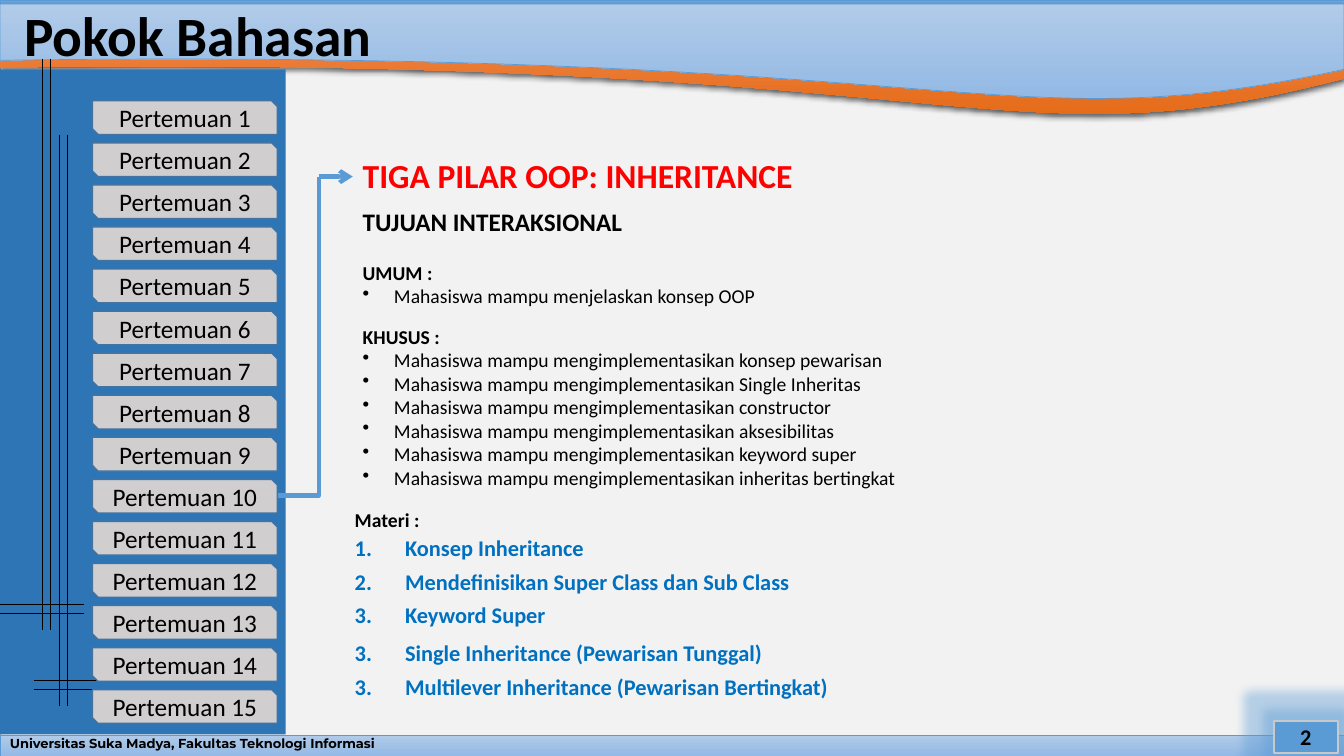
from lxml.etree import SubElement
from pptx import Presentation
from pptx.dml.color import RGBColor
from pptx.enum.shapes import MSO_CONNECTOR, MSO_SHAPE
from pptx.enum.text import MSO_ANCHOR, MSO_AUTO_SIZE, PP_ALIGN
from pptx.oxml.ns import qn
from pptx.util import Cm, Pt

RECT, SNIP = MSO_SHAPE.RECTANGLE, MSO_SHAPE.SNIP_2_DIAG_RECTANGLE
LINE, ELBOW = MSO_CONNECTOR.STRAIGHT, MSO_CONNECTOR.ELBOW
MIDDLE, LEFT, FIXED = MSO_ANCHOR.MIDDLE, PP_ALIGN.LEFT, MSO_AUTO_SIZE.NONE
HUES = {
    "ink": "000000", "page": "F2F2F2", "rim": "A5A5A5", "side": "2E75B6",
    "sky": "5B9BD5", "pale": "B1CBE9", "mist": "93B9E4", "crest": "71A6DB",
    "deep": "448ACA", "peach": "F18C57", "rust": "E56C19", "tile": "D0CECE",
    "edge": "43739E", "frame": "C9C9C9", "red": "FF0000", "blue": "0070C0",
}
RGB = {name: RGBColor.from_string(code) for name, code in HUES.items()}
WIDE, HIGH = 33.87, 19.05


def paint(shape, fill, edge=None, width=0.5):
    """Fill with one colour or a vertical pair of colours, and set the outline."""
    shape.shadow.inherit = False
    if isinstance(fill, tuple):
        shape.fill.gradient()
        shape.fill.gradient_angle = 270
        for stop, hue in zip(shape.fill.gradient_stops, fill):
            stop.color.rgb = RGB[hue]
    else:
        shape.fill.solid()
        shape.fill.fore_color.rgb = RGB[fill]
    if edge:
        shape.line.color.rgb = RGB[edge]
        shape.line.width = Pt(width)
    else:
        shape.line.fill.background()


def write(para, text, size, hue="ink", **form):
    run = para.add_run()
    run.text = text
    run.font.color.rgb = RGB[hue]
    look = {"name": "Calibri", "bold": True, "size": Pt(size)} | form
    for key, value in look.items():
        setattr(run.font, key, value)


deck = Presentation()
deck.slide_width, deck.slide_height = Cm(WIDE), Cm(HIGH)
slide = deck.slides.add_slide(deck.slide_layouts[5])
shapes = slide.shapes

# Full-width layers: fill, edge, top, bottom, heights of the wave's control points
layers = [
    ("page", "rim", 0.1, HIGH, None),
    (("peach", "rust"), None, 0.03, 0, (1.7, 1.35, 4.27, 1.98)),
    (("pale", "mist"), "sky", 18.52, HIGH, None),
    (("crest", "deep"), "sky", 0, 0.28, None),
    (("pale", "mist"), "sky", 0.1, 0, (1.52, 1.19, 3.66, 1.75)),
]
waves = []
for fill, edge, top, low, curve in layers:
    if curve:
        points = []
        for step in range(61):
            t = step / 60
            mix = ((1 - t) ** 3, 3 * t * (1 - t) ** 2, 3 * t * t * (1 - t), t ** 3)
            x = sum(m * c for m, c in zip(mix, (0, 24.79, 25.04, WIDE)))
            y = sum(m * c for m, c in zip(mix, curve))
            points.append((Cm(x), Cm(y)))
        pen = shapes.build_freeform(Cm(WIDE), Cm(top))
        pen.add_line_segments([(0, Cm(top))] + points)
        layer = pen.convert_to_shape()
        waves.append(layer)
    else:
        layer = shapes.add_shape(RECT, 0, Cm(top), Cm(WIDE), Cm(low - top))
    paint(layer, fill, edge)

foot = shapes.add_textbox(0, Cm(18.52), Cm(WIDE), Cm(0.53)).text_frame
foot.word_wrap, foot.vertical_anchor = True, MIDDLE
foot.paragraphs[0].line_spacing = 0.7
write(foot.paragraphs[0], "Universitas Suka Madya, Fakultas Teknologi Informasi", 9.3,
      name="Montserrat")

badge = shapes.add_shape(RECT, Cm(32.11), Cm(18.16), Cm(1.6), Cm(0.81))
paint(badge, "sky", "frame", 1.5)
write(badge.text_frame.paragraphs[0], "2", 16)

# Soft effects: shape, kind, colour, opacity, settings
effects = [
    (waves[0], "outerShdw", "ink", 63, {"blurRad": 4.5, "dist": 1.5}),
    (badge, "glow", "sky", 40, {"rad": 14}),
]
for shape, kind, hue, alpha, sizes in effects:
    group = shape.element.spPr.find(qn("a:effectLst"))
    soft = SubElement(group, qn("a:" + kind))
    for key, value in sizes.items():
        soft.set(key, str(Pt(value)))
    if kind == "outerShdw":
        soft.set("dir", "5400000")
    tint = SubElement(soft, qn("a:srgbClr"), val=HUES[hue])
    SubElement(tint, qn("a:alpha"), val=str(alpha * 1000))

title = shapes.title
shapes.element.append(title.element)
place = {"left": 0.36, "top": 0.2, "width": 32.23, "height": 1.55}
for key, value in place.items():
    setattr(title, key, Cm(value))
for key, value in {"auto_size": FIXED, "vertical_anchor": MIDDLE, "word_wrap": True}.items():
    setattr(title.text_frame, key, value)
head = title.text_frame.paragraphs[0]
head.alignment, head.line_spacing = LEFT, 0.9
write(head, "Pokok Bahasan", 39.6)

side = shapes.add_shape(RECT, 0, Cm(1.75), Cm(7.2), Cm(16.76))
paint(side, "side")

# Lines: kind, from x, from y, to x, to y, colour, width
rules = [(LINE, x, y, x, y + 14.4, "ink", 0.5)
         for x, y in ((1.06, 1.48), (1.27, 1.48), (1.49, 3.39), (1.7, 3.39))]
rules += [(LINE, x, y, end, y, "ink", 0.5)
          for x, end, y in ((0.85, 3.81, 17.15), (0.85, 3.81, 17.36),
                            (0, 2.12, 15.46), (0, 2.12, 15.24))]
rules += [(ELBOW, 6.99, 12.49, 8.04, 4.45, "sky", 3),
          (LINE, 8.04, 4.45, 8.89, 4.45, "sky", 3)]
links = []
for kind, x, y, end, low, hue, width in rules:
    link = shapes.add_connector(kind, Cm(x), Cm(y), Cm(end), Cm(low))
    link.line.color.rgb = RGB[hue]
    link.line.width = Pt(width)
    SubElement(link.element.spPr, qn("a:effectLst"))
    links.append(link)
bend, arrow = links[-2:]
bend.element.spPr.find(qn("a:prstGeom")).set("prst", "bentConnector2")
SubElement(arrow.element.spPr.find(qn("a:ln")), qn("a:tailEnd"), type="arrow")

for week in range(15):
    tile = shapes.add_shape(SNIP, Cm(2.33), Cm(2.54 + 1.06 * week), Cm(4.66), Cm(0.85))
    paint(tile, "tile", "edge", 1)
    tile.text_frame.word_wrap = True
    write(tile.text_frame.paragraphs[0], f"Pertemuan {week + 1}", 18, bold=False)

# Single-line texts: left, top, width, height, text, size, colour
notes = [
    (8.89, 3.78, 18.47, 1.27, "TIGA PILAR OOP: INHERITANCE", 24, "red"),
    (8.69, 12.67, 3, 0.86, "Materi :", 14, "ink"),
]
topics = [
    (13.33, "1.\tKonsep Inheritance"),
    (14.18, "2.\tMendefinisikan Super Class dan Sub Class"),
    (15.03, "3.\tKeyword Super"),
    (15.98, "3.\tSingle Inheritance (Pewarisan Tunggal)"),
    (16.83, "3.\tMultilever Inheritance (Pewarisan Bertingkat)"),
]
notes += [(8.69, top, 16.31, 0.94, text, 16, "blue") for top, text in topics]
for left, top, width, height, text, size, hue in notes:
    frame = shapes.add_textbox(Cm(left), Cm(top), Cm(width), Cm(height)).text_frame
    frame.word_wrap = True
    para = frame.paragraphs[0]
    if "\t" in text:
        para.space_before = Pt(6)
        props = para._p.get_or_add_pPr()
        props.set("marL", str(Cm(1.27)))
        props.set("indent", str(Cm(-1.27)))
    write(para, text, size, hue)

# Goals: heading, size, space before, bullets
goals = [
    ("TUJUAN INTERAKSIONAL", 18, 0, []),
    ("UMUM :", 14, 17, ["menjelaskan konsep OOP"]),
    ("KHUSUS :", 14, 12, ["mengimplementasikan " + skill for skill in (
        "konsep pewarisan", "Single Inheritas", "constructor",
        "aksesibilitas", "keyword super", "inheritas bertingkat")]),
]
frame = shapes.add_textbox(Cm(8.89), Cm(5.08), Cm(14.07), Cm(7.44)).text_frame
frame.word_wrap = True
para = frame.paragraphs[0]
for text, size, gap, skills in goals:
    if gap:
        para = frame.add_paragraph()
    para.space_before = Pt(gap)
    write(para, text, size)
    for skill in skills:
        para = frame.add_paragraph()
        props = para._p.get_or_add_pPr()
        props.set("marL", str(Cm(0.79)))
        props.set("indent", str(Cm(-0.79)))
        SubElement(props, qn("a:buChar"), char="•")
        write(para, "Mahasiswa mampu " + skill, 14, bold=False)

deck.save("out.pptx")
